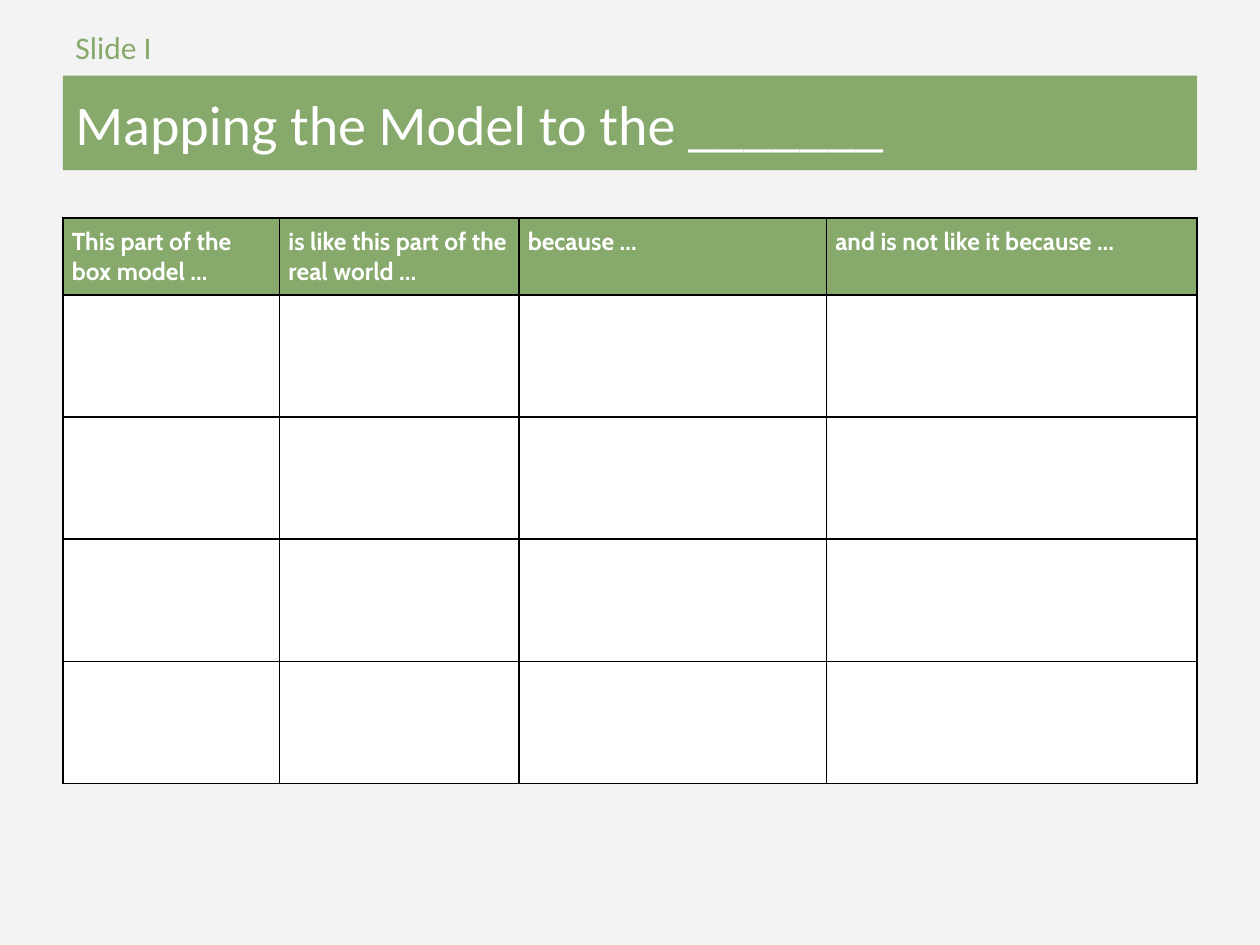
from dataclasses import dataclass

from lxml.etree import SubElement as Sub
from pptx import Presentation
from pptx.dml.color import RGBColor as Rgb
from pptx.enum.shapes import MSO_SHAPE as Shape
from pptx.enum.text import MSO_ANCHOR as Anchor, PP_ALIGN as Align
from pptx.oxml.ns import qn
from pptx.util import Inches, Pt

HUES = {"back": "F3F3F3", "green": "87A96B", "white": "FFFFFF", "line": "000000"}


@dataclass
class Column:
    head: str
    width: float


COLUMNS = [
    Column("This part of the box model ...", 1.72),
    Column("is like this part of the real world ...", 1.9),
    Column("because ...", 2.44),
    Column("and is not like it because ...", 2.94),
]
LEFT, WIDTH = 0.5, 9
HEAD, ROW, COUNT = 0.61, 0.97, 4


def hue(name: str) -> Rgb:
    return Rgb.from_string(HUES[name])


def write(frame, text: str, *, size: float, font: str = "Calibri",
          color: str = "white", bold: bool = False, space: float = 1.0) -> None:
    """Put one formatted line of text in a frame."""
    frame.word_wrap = True
    para = frame.paragraphs[0]
    para.alignment, para.line_spacing = Align.LEFT, space
    run = para.add_run()
    run.text = text
    run.font.size, run.font.name, run.font.bold = Pt(size), font, bold
    run.font.color.rgb = hue(color)


def inset(part, gap: float) -> None:
    """Set equal margins on a text frame or a cell."""
    part.margin_left = part.margin_right = Inches(gap)
    part.margin_top = part.margin_bottom = Inches(gap)


def style(cell, fill: str) -> None:
    """Give a cell its margins, borders and fill."""
    inset(cell, 0.07)
    props = cell._tc.get_or_add_tcPr()
    for side in ("a:lnL", "a:lnR", "a:lnT", "a:lnB"):
        line = Sub(props, qn(side), w=str(Pt(1)))
        Sub(Sub(line, qn("a:solidFill")), qn("a:srgbClr"), val=HUES["line"])
    cell.fill.solid()
    cell.fill.fore_color.rgb = hue(fill)


def draw_label(slide) -> None:
    box = slide.shapes.add_textbox(Inches(LEFT), Inches(0.08), Inches(3.85), Inches(0.51))
    inset(box.text_frame, 0.1)
    write(box.text_frame, "Slide I", size=18, color="green", space=1.15)


def draw_title(slide) -> None:
    bar = slide.shapes.add_shape(Shape.RECTANGLE, Inches(LEFT), Inches(0.6),
                                 Inches(WIDTH), Inches(0.75))
    bar.shadow.inherit = False
    bar.fill.solid()
    bar.fill.fore_color.rgb = hue("green")
    bar.line.fill.background()
    bar.text_frame.vertical_anchor = Anchor.MIDDLE
    inset(bar.text_frame, 0.1)
    write(bar.text_frame, "Mapping the Model to the _______", size=32)


def draw_table(slide) -> None:
    table = slide.shapes.add_table(
        COUNT + 1, len(COLUMNS), Inches(LEFT), Inches(1.73),
        Inches(WIDTH), Inches(HEAD + COUNT * ROW)).table
    for row, high in zip(table.rows, [HEAD] + [ROW] * COUNT):
        row.height = Inches(high)
    for i, col in enumerate(COLUMNS):
        table.columns[i].width = Inches(col.width)
        for j in range(COUNT + 1):
            style(table.cell(j, i), "white" if j else "green")
        write(table.cell(0, i).text_frame, col.head, size=14, font="Cabin", bold=True)


def main() -> None:
    deck = Presentation()
    deck.slide_width, deck.slide_height = Inches(10), Inches(7.5)
    slide = deck.slides.add_slide(deck.slide_layouts[6])
    slide.background.fill.solid()
    slide.background.fill.fore_color.rgb = hue("back")
    draw_label(slide)
    draw_title(slide)
    draw_table(slide)
    deck.save("out.pptx")


if __name__ == "__main__":
    main()
